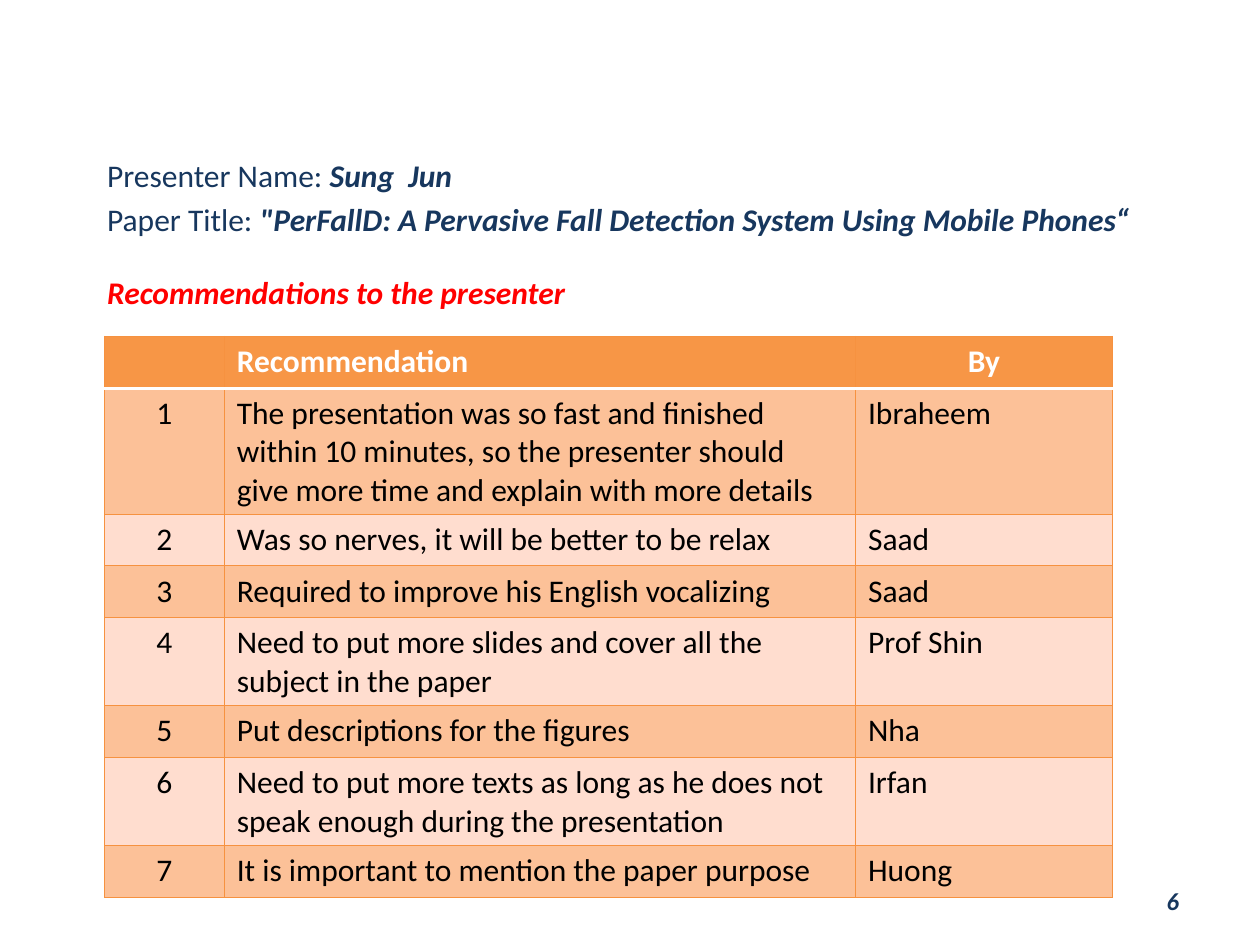
from lxml.etree import SubElement as Sub
from pptx import Presentation
from pptx.dml.color import RGBColor as RGB
from pptx.enum.text import MSO_ANCHOR as Anchor, MSO_AUTO_SIZE as Auto, PP_ALIGN as Align
from pptx.oxml.ns import qn
from pptx.util import Inches, Pt

NAVY, RED, BLACK, WHITE = "17375E", "FF0000", "000000", "FFFFFF"
HEAD, EDGE, DARK, PALE = "F79646", "F69240", "FCC198", "FFDDCF"

INTRO = [
    (0, [("Presenter Name: ", NAVY, False), ("Sung  Jun", NAVY, True)]),
    (3.6, [("Paper Title: ", NAVY, False),
           ("\"PerFallD: A Pervasive Fall Detection System Using Mobile Phones“", NAVY, True)]),
    (19.8, [("Recommendations to the presenter", RED, True)]),
]
NOTES = [
    ("The presentation was so fast and finished within 10 minutes, "
     "so the presenter should give more time and explain with more details", "Ibraheem"),
    ("Was so nerves, it will be better to be relax", "Saad"),
    ("Required to improve his English vocalizing", "Saad"),
    ("Need to put more slides and cover all the subject in the paper", "Prof Shin"),
    ("Put descriptions for the figures", "Nha"),
    ("Need to put more texts as long as he does not speak enough during the presentation", "Irfan"),
    ("It is important to mention the paper purpose", "Huong"),
]
ROWS = [("", "Recommendation", "By")]
ROWS += [(str(n), note, by) for n, (note, by) in enumerate(NOTES, 1)]
COLS = [0.95, 5.01, 2.04]
HIGH = 0.41


def color(code):
    return RGB.from_string(code)


def write(para, text, code, size=18, bold=False, slant=False):
    run = para.add_run()
    run.text = text
    font = run.font
    font.name, font.size = "Calibri", Pt(size)
    font.bold, font.italic = bold, slant
    font.color.rgb = color(code)


def border(cell, side, code, width):
    line = Sub(cell._tc.get_or_add_tcPr(), qn("a:ln" + side), w=str(Pt(width)))
    fill = Sub(line, qn("a:solidFill"))
    Sub(fill, qn("a:srgbClr"), val=code)


def add_intro(slide):
    box = slide.placeholders[1]
    box.left, box.top, box.width, box.height = map(Inches, (0.75, 0.83, 8.67, 2.08))
    frame = box.text_frame
    frame.auto_size = Auto.NONE
    frame.vertical_anchor = Anchor.TOP
    frame.margin_top = Inches(0.41)
    for i, (gap, runs) in enumerate(INTRO):
        para = frame.add_paragraph() if i else frame.paragraphs[0]
        para.alignment = Align.LEFT
        para.space_before = Pt(gap)
        for text, code, strong in runs:
            write(para, text, code, bold=strong, slant=strong)


def add_page(slide):
    box = slide.shapes.add_textbox(*map(Inches, (7.17, 6.95, 2.33, 0.4)))
    frame = box.text_frame
    frame.word_wrap = True
    frame.vertical_anchor = Anchor.MIDDLE
    para = frame.paragraphs[0]
    para.alignment = Align.RIGHT
    write(para, "6 ", NAVY, 14, True, True)


def add_grid(slide):
    size = Inches(sum(COLS)), Inches(HIGH * len(ROWS))
    table = slide.shapes.add_table(len(ROWS), len(COLS), Inches(0.83), Inches(2.67), *size).table
    for col, wide in zip(table.columns, COLS):
        col.width = Inches(wide)
    for r, row in enumerate(ROWS):
        table.rows[r].height = Inches(HIGH)
        for c, text in enumerate(row):
            cell = table.cell(r, c)
            for side in "LRTB":
                rule = (r == 0 and side == "B") or (r == 1 and side == "T")
                border(cell, side, *((WHITE, 2) if rule else (EDGE, 0.75)))
            cell.fill.solid()
            cell.fill.fore_color.rgb = color(HEAD if r == 0 else DARK if r % 2 else PALE)
            para = cell.text_frame.paragraphs[0]
            mid = c == 0 or (r == 0 and c == 2)
            para.alignment = Align.CENTER if mid else Align.LEFT
            if text:
                write(para, text, BLACK if r else WHITE, bold=r == 0)


def main():
    deck = Presentation()
    deck.slide_width, deck.slide_height = Inches(10), Inches(7.5)
    slide = deck.slides.add_slide(deck.slide_layouts[0])
    title = slide.shapes.title.element
    title.getparent().remove(title)
    add_intro(slide)
    add_page(slide)
    add_grid(slide)
    deck.save("out.pptx")


if __name__ == "__main__":
    main()
